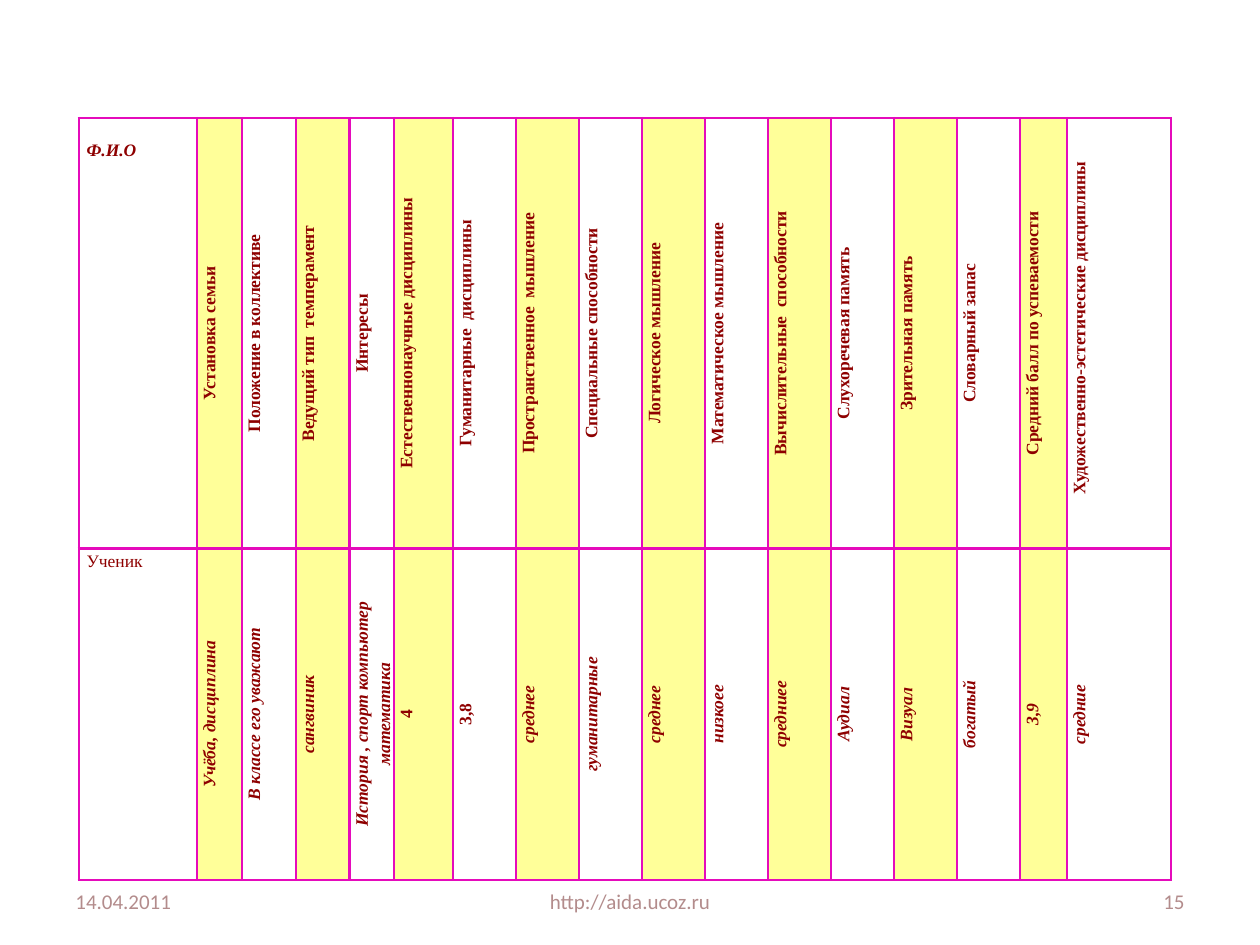
from lxml.etree import SubElement
from pptx import Presentation
from pptx.dml.color import RGBColor
from pptx.enum.text import MSO_ANCHOR, PP_ALIGN
from pptx.oxml.ns import qn
from pptx.util import Pt

COLORS = {"text": "8E0000", "band": "FFFF99", "border": "E50BBB", "footer": "B38C8C"}

# Column width, heading, value for the pupil
COLUMNS = [
    (67.5, "Ф.И.О", "Ученик"),
    (25.7, "Установка семьи", "Учёба, дисциплина"),
    (30.8, "Положение в коллективе", "В классе его уважают"),
    (30.8, "Ведущий тип  темперамент", "сангвиник"),
    (25.4, "Интересы", "История , спорт компьютер математика"),
    (33.7, "Естественнонаучные дисциплины", "4"),
    (36, "Гуманитарные  дисциплины", "3,8"),
    (36, "Пространственное  мышление", "среднее"),
    (36, "Специальные способности", "гуманитарные"),
    (36, "Логическое мышление", "среднее"),
    (36, "Математическое мышление", "низкоее"),
    (36, "Вычислительные  способности", "средниее"),
    (36, "Слухоречевая память", "Аудиал"),
    (36, "Зрительная память", "Визуал"),
    (36, "Словарный запас", "богатый"),
    (26.9, "Средний балл по успеваемости", "3,9"),
    (59.5, "Художественно-эстетические дисциплины", "средние"),
]
ROW_HEIGHTS = (246, 170)
UPRIGHT_GRADES = ("4", "3,8")


def rgb(name):
    return RGBColor.from_string(COLORS[name])


def add_text(paragraph, text, font, size, color, bold=False, italic=False):
    run = paragraph.add_run()
    run.text = text
    run.font.name = font
    run.font.size = Pt(size)
    run.font.color.rgb = rgb(color)
    run.font.bold = bold
    run.font.italic = italic


def add_borders(cell):
    properties = cell._tc.get_or_add_tcPr()
    for position, side in enumerate(("a:lnL", "a:lnR", "a:lnT", "a:lnB")):
        line = properties.makeelement(qn(side), {"w": str(Pt(1.5))})
        solid = SubElement(line, qn("a:solidFill"))
        SubElement(solid, qn("a:srgbClr"), val=COLORS["border"])
        properties.insert(position, line)


def format_cell(cell, row, column, text):
    is_name = column == 0
    is_grade = row == 1 and text in UPRIGHT_GRADES
    cell.margin_left = cell.margin_right = Pt(4.5)
    cell.margin_top = cell.margin_bottom = Pt(0)
    if column % 2:
        cell.fill.solid()
        cell.fill.fore_color.rgb = rgb("band")
    else:
        cell.fill.background()
    add_borders(cell)
    cell.vertical_anchor = MSO_ANCHOR.BOTTOM if is_grade else MSO_ANCHOR.TOP
    if not is_name:
        cell._tc.get_or_add_tcPr().set("vert", "vert270")

    paragraph = cell.text_frame.paragraphs[0]
    paragraph.alignment = PP_ALIGN.JUSTIFY if is_name else PP_ALIGN.CENTER
    paragraph.line_spacing = 1.15
    # Names lean in the heading only, the other columns in the value only
    add_text(paragraph, text, "Times New Roman", 10, "text",
             bold=not (is_name and row == 1),
             italic=(row == 0) == is_name and not is_grade)


def add_pupil_table(slide, left, top, width, height):
    frame = slide.shapes.add_table(len(ROW_HEIGHTS), len(COLUMNS),
                                   Pt(left), Pt(top), Pt(width), Pt(height))
    table = frame.table
    table.first_row = table.horz_banding = False
    for row, row_height in enumerate(ROW_HEIGHTS):
        table.rows[row].height = Pt(row_height)
    for column, (column_width, *texts) in enumerate(COLUMNS):
        table.columns[column].width = Pt(column_width)
        for row, text in enumerate(texts):
            format_cell(table.cell(row, column), row, column, text)

    # The name heading sits a line lower, the last heading is indented
    table.cell(0, 0).margin_top = Pt(11.5)
    last_heading = table.cell(0, len(COLUMNS) - 1).text_frame.paragraphs[0]
    last_heading._p.get_or_add_pPr().set("marL", str(Pt(6)))


def add_footer(slide, left, top, width, height):
    parts = [
        (0, 168, "14.04.2011", PP_ALIGN.LEFT),
        ((width - 228) / 2, 228, "http://aida.ucoz.ru", PP_ALIGN.CENTER),
        (width - 168, 168, "15", PP_ALIGN.RIGHT),
    ]
    for offset, part_width, text, alignment in parts:
        part = slide.shapes.add_textbox(Pt(left + offset), Pt(top), Pt(part_width), Pt(height))
        part.text_frame.word_wrap = True
        part.text_frame.vertical_anchor = MSO_ANCHOR.MIDDLE
        paragraph = part.text_frame.paragraphs[0]
        paragraph.alignment = alignment
        add_text(paragraph, text, "Calibri", 12, "footer")


def main():
    presentation = Presentation()
    presentation.slide_width, presentation.slide_height = Pt(720), Pt(540)
    slide = presentation.slides.add_slide(presentation.slide_layouts[6])
    add_footer(slide, 36, 500.5, 648, 28.75)
    add_pupil_table(slide, 45, 67.5, sum(column[0] for column in COLUMNS), sum(ROW_HEIGHTS))
    presentation.save("out.pptx")


if __name__ == "__main__":
    main()
